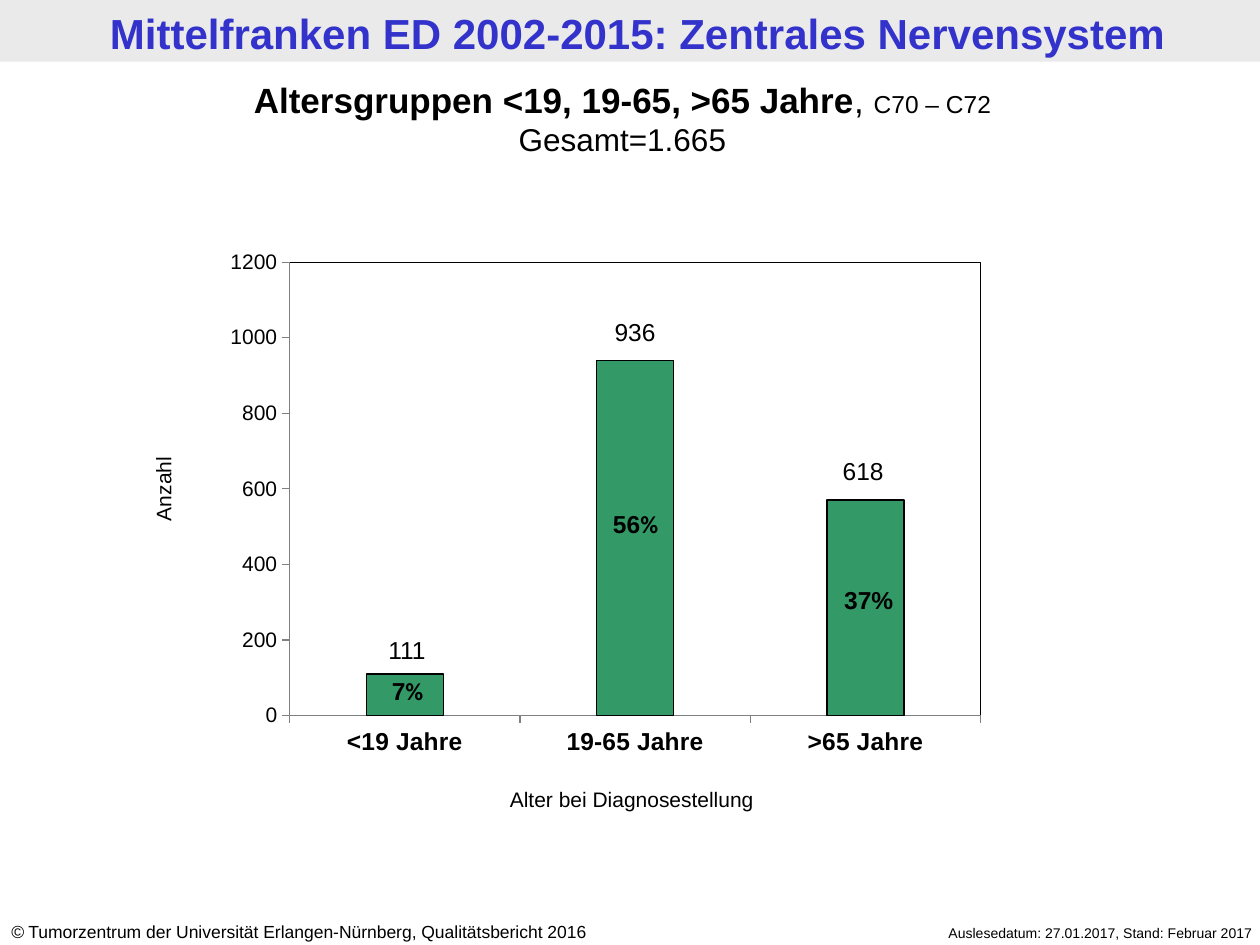
from dataclasses import dataclass

from pptx import Presentation
from pptx.chart.data import CategoryChartData
from pptx.dml.color import RGBColor
from pptx.enum.chart import XL_CHART_TYPE, XL_TICK_MARK
from pptx.enum.shapes import MSO_SHAPE
from pptx.enum.text import PP_ALIGN
from pptx.oxml import parse_xml
from pptx.oxml.ns import nsdecls
from pptx.util import Inches, Pt

STACKED = XL_CHART_TYPE.COLUMN_STACKED
OUT, NONE = XL_TICK_MARK.OUTSIDE, XL_TICK_MARK.NONE
RECT = MSO_SHAPE.RECTANGLE
LEFT, MID, RIGHT = PP_ALIGN.LEFT, PP_ALIGN.CENTER, PP_ALIGN.RIGHT
BLACK, BLUE, GREEN, GREY, PALE = "000000", "3333CC", "339966", "808080", "EAEAEA"


@dataclass
class Run:
    text: str
    size: float
    bold: bool = False
    color: str = BLACK
    font: str = "Arial"
    italic: bool = False


@dataclass
class Label:
    box: tuple[float, float, float, float]
    lines: list[list[Run]]
    align: PP_ALIGN = MID
    turn: float = 0


LABELS = [
    Label((0.06, 0.01, 10, 0.49), [[Run("Mittelfranken ED 2002-2015: Zentrales Nervensystem", 24, True, BLUE)]]),
    Label((-0.01, 7.26, 5.24, 0.27), [[
        Run("©", 10, italic=True),
        Run(" Tumorzentrum der Universität Erlangen-Nürnberg, Qualitätsbericht 2016", 10),
    ]], LEFT),
    Label((6.65, 7.29, 3.39, 0.24), [[Run("Auslesedatum: 27.01.2017, Stand: Februar 2017", 8)]], RIGHT),
    Label((0, 0.57, 9.88, 0.74), [
        [Run("Altersgruppen <19, 19-65, >65 Jahre", 20, True), Run(", ", 20), Run("C70 – C72", 14)],
        [Run("Gesamt=1.665", 18)],
    ]),
    Label((4.61, 3.99, 0.87, 0.34), [[Run("56", 14, True), Run("%", 14, True, font="Calibri")]]),
    Label((6.42, 4.59, 0.95, 0.34), [[Run("37%", 14, True)]]),
    Label((3.35, 6.19, 3.33, 0.3), [[Run("Alter bei Diagnosestellung", 12)]]),
    Label((-0.01, 3.73, 2.61, 0.3), [[Run("Anzahl", 12)]], turn=270),
    Label((4.53, 2.47, 1.02, 0.34), [[Run("936", 14)]]),
    Label((6.34, 3.57, 1.02, 0.34), [[Run("618", 14)]]),
    Label((2.8, 5.32, 0.87, 0.34), [[Run("7", 14, True), Run("%", 14, True, font="Calibri")]]),
    Label((2.72, 4.99, 1.02, 0.34), [[Run("111", 14)]]),
]


def rgb(color: str) -> RGBColor:
    return RGBColor.from_string(color)


def style(font, size: float, bold: bool = False, color: str = BLACK, name: str = "Arial") -> None:
    font.size, font.bold, font.name = Pt(size), bold, name
    font.color.rgb = rgb(color)


def add_label(slide, label: Label) -> None:
    box = slide.shapes.add_textbox(*map(Inches, label.box))
    box.rotation = label.turn
    frame = box.text_frame
    frame.word_wrap = True
    for i, line in enumerate(label.lines):
        para = frame.add_paragraph() if i else frame.paragraphs[0]
        para.alignment = label.align
        for part in line:
            run = para.add_run()
            run.text = part.text
            style(run.font, part.size, part.bold, part.color, part.font)
            run.font.italic = part.italic


def add_band(slide) -> None:
    band = slide.shapes.add_shape(RECT, 0, 0, Inches(10), Inches(0.49))
    band.shadow.inherit = False
    band.fill.solid()
    band.fill.fore_color.rgb = rgb(PALE)
    band.line.fill.background()


def frame_plot(chart, x: float, y: float, w: float, h: float) -> None:
    area = chart.element.xpath("c:chart/c:plotArea")[0]
    for old in area.xpath("c:layout"):
        area.remove(old)
    sides = "".join(f'<c:{key} val="{val}"/>' for key, val in zip("xywh", (x, y, w, h)))
    area.insert(0, parse_xml(
        f'<c:layout {nsdecls("c")}><c:manualLayout><c:layoutTarget val="inner"/>'
        f'<c:xMode val="edge"/><c:yMode val="edge"/>{sides}</c:manualLayout></c:layout>'))
    area.append(parse_xml(
        f'<c:spPr {nsdecls("c", "a")}><a:noFill/><a:ln w="{Pt(0.75)}"><a:solidFill>'
        f'<a:srgbClr val="{BLACK}"/></a:solidFill></a:ln></c:spPr>'))


def add_bars(slide) -> None:
    data = CategoryChartData()
    data.categories = ["<19 Jahre", "19-65 Jahre", ">65 Jahre"]
    data.add_series("Series 1", (110, 940, 570))
    box = map(Inches, (1.51, 1.42, 6.98, 4.66))
    chart = slide.shapes.add_chart(STACKED, *box, data).chart
    chart.has_legend = chart.has_title = False
    style(chart.font, 18, name="Calibri")
    frame_plot(chart, 0.113, 0.142, 0.786, 0.772)

    plot = chart.plots[0]
    plot.gap_width, plot.overlap, plot.vary_by_categories = 200, 100, False
    bars = plot.series[0].format
    bars.fill.solid()
    bars.fill.fore_color.rgb = rgb(GREEN)
    bars.line.color.rgb = rgb(BLACK)
    bars.line.width = Pt(0.75)

    for axis, size, bold in ((chart.category_axis, 14, True), (chart.value_axis, 12, False)):
        axis.has_major_gridlines = False
        axis.major_tick_mark, axis.minor_tick_mark = OUT, NONE
        axis.format.line.color.rgb = rgb(GREY)
        axis.format.line.width = Pt(0.75)
        style(axis.tick_labels.font, size, bold)
    scale = chart.value_axis
    scale.minimum_scale, scale.maximum_scale, scale.major_unit = 0, 1200, 200


def main() -> None:
    """Build the slide on age groups at diagnosis."""
    deck = Presentation()
    deck.slide_width, deck.slide_height = Inches(10), Inches(7.5)
    slide = deck.slides.add_slide(deck.slide_layouts[6])
    add_band(slide)
    add_bars(slide)
    for label in LABELS:
        add_label(slide, label)
    deck.save("out.pptx")


if __name__ == "__main__":
    main()
